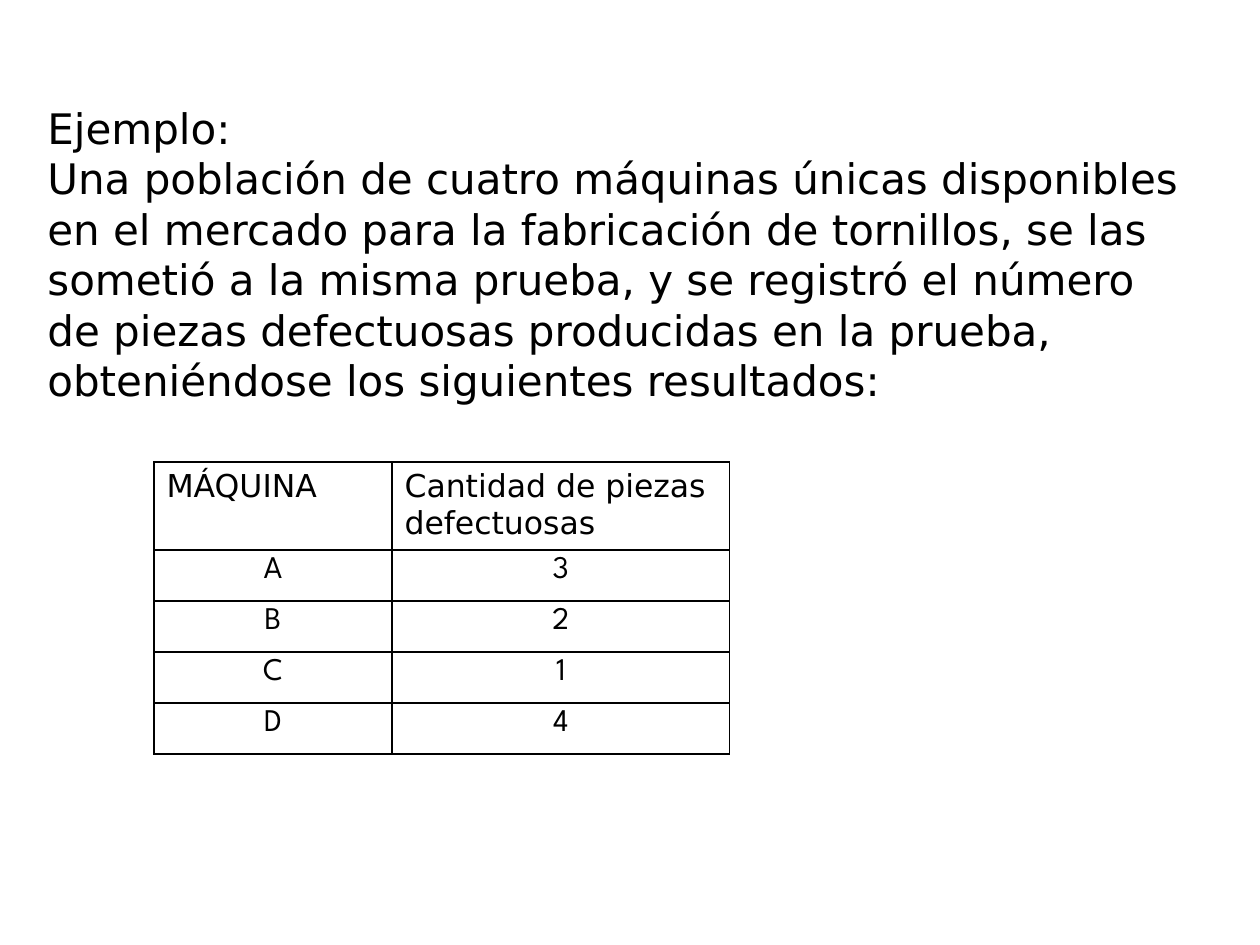
from typing import NamedTuple

from lxml.etree import SubElement
from pptx import Presentation
from pptx.dml.color import RGBColor
from pptx.enum.text import MSO_AUTO_SIZE, PP_ALIGN as Align
from pptx.oxml.ns import qn
from pptx.util import Pt

BLACK = RGBColor(0, 0, 0)
TEXT_FONT = "DejaVu Sans"
DATA_FONT = "League Spartan"


class Machine(NamedTuple):
    name: str
    defects: int


MACHINES = [Machine("A", 3), Machine("B", 2), Machine("C", 1), Machine("D", 4)]
HEADINGS = ("MÁQUINA", "Cantidad de piezas defectuosas")
COLUMN_WIDTHS = (136, 193)
HEADER_HEIGHT, ROW_HEIGHT = 50.4, 29.16

STATEMENT = (
    "Ejemplo:",
    "Una población de cuatro máquinas únicas disponibles en el mercado para la "
    "fabricación de tornillos, se las sometió a la misma prueba, y se registró "
    "el número de piezas defectuosas producidas en la prueba, obteniéndose los "
    "siguientes resultados:",
)


def add_text(paragraph, text: str, size: float, font: str) -> None:
    run = paragraph.add_run()
    run.text = text
    run.font.size = Pt(size)
    run.font.name = font
    run.font.color.rgb = BLACK


def add_borders(cell, width: float = 1) -> None:
    properties = cell._tc.get_or_add_tcPr()
    for side in ("a:lnL", "a:lnR", "a:lnT", "a:lnB"):
        line = SubElement(properties, qn(side), w=str(Pt(width)))
        fill = SubElement(line, qn("a:solidFill"))
        SubElement(fill, qn("a:srgbClr"), val=str(BLACK))


def fill_cell(cell, text: str, font: str, align: Align) -> None:
    add_borders(cell)
    cell.fill.background()
    paragraph = cell.text_frame.paragraphs[0]
    paragraph.alignment = align
    add_text(paragraph, text, 18, font)


def add_statement(slide) -> None:
    frame = slide.shapes.add_textbox(Pt(20), Pt(55), Pt(669), Pt(181)).text_frame
    frame.word_wrap = True
    frame.auto_size = MSO_AUTO_SIZE.SHAPE_TO_FIT_TEXT
    for index, text in enumerate(STATEMENT):
        paragraph = frame.add_paragraph() if index else frame.paragraphs[0]
        add_text(paragraph, text, 24, TEXT_FONT)


def add_results(slide) -> None:
    height = HEADER_HEIGHT + ROW_HEIGHT * len(MACHINES)
    results = slide.shapes.add_table(
        len(MACHINES) + 1, len(HEADINGS),
        Pt(88), Pt(264), Pt(sum(COLUMN_WIDTHS)), Pt(height),
    ).table
    results.first_row = results.horz_banding = False
    for column, width in zip(results.columns, COLUMN_WIDTHS):
        column.width = Pt(width)
    for index, row in enumerate(results.rows):
        row.height = Pt(ROW_HEIGHT if index else HEADER_HEIGHT)

    # Heading row, then one row per machine
    for column, heading in enumerate(HEADINGS):
        fill_cell(results.cell(0, column), heading, TEXT_FONT, Align.LEFT)
    for row, machine in enumerate(MACHINES, start=1):
        for column, value in enumerate(machine):
            fill_cell(results.cell(row, column), str(value), DATA_FONT, Align.CENTER)


def main() -> None:
    deck = Presentation()
    deck.slide_width, deck.slide_height = Pt(720), Pt(540)
    slide = deck.slides.add_slide(deck.slide_layouts[6])
    add_statement(slide)
    add_results(slide)
    deck.save("out.pptx")


if __name__ == "__main__":
    main()
